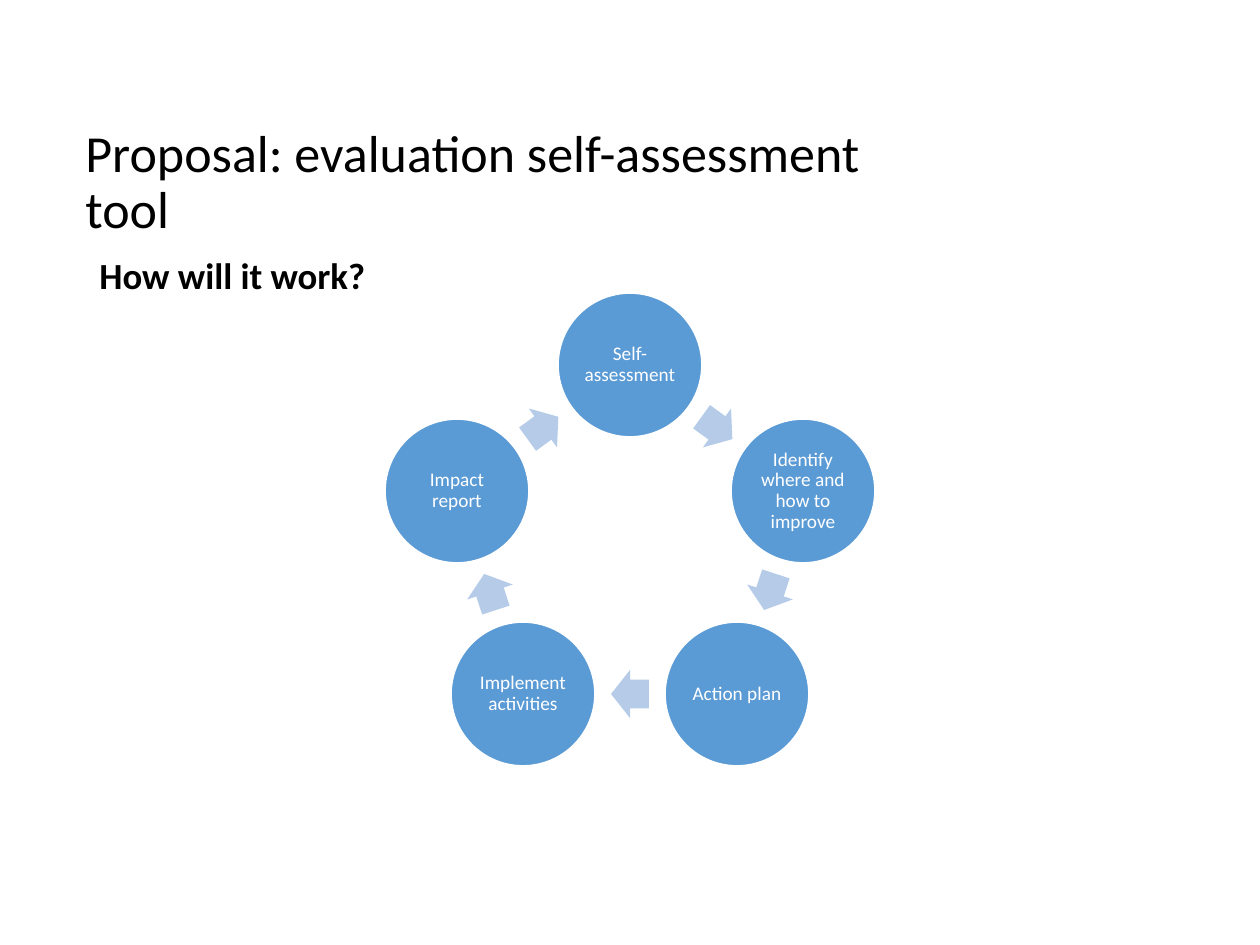
import math

import pptx
import pptx.util
from pptx.dml.color import RGBColor
from pptx.enum.shapes import MSO_SHAPE
from pptx.enum.text import MSO_ANCHOR, PP_ALIGN

PX = pptx.util.Inches(1) // 126
BLACK = RGBColor(0x00, 0x00, 0x00)
WHITE = RGBColor(0xFF, 0xFF, 0xFF)
BLUE = RGBColor(0x5B, 0x9B, 0xD5)
PALE_BLUE = RGBColor(0xB5, 0xCB, 0xE7)

CENTER_X, CENTER_Y, RADIUS = 630, 547, 182
CIRCLE = 144
ARROW_WIDTH, ARROW_HEIGHT = 38, 48
STEPS = [
    "Self-assessment",
    "Identify where and how to improve",
    "Action plan",
    "Implement activities",
    "Impact report",
]


def write(shape, text, size, color=BLACK, bold=False, align=PP_ALIGN.LEFT,
          anchor=MSO_ANCHOR.TOP, before=0, inset=None):
    frame = shape.text_frame
    frame.word_wrap = True
    frame.vertical_anchor = anchor
    if inset is not None:
        frame.margin_left = frame.margin_right = inset * PX
        frame.margin_top = frame.margin_bottom = inset * PX
    paragraph = frame.paragraphs[0]
    paragraph.alignment = align
    paragraph.line_spacing = 0.9
    paragraph.space_before = pptx.util.Pt(before)
    run = paragraph.add_run()
    run.text = text
    run.font.name = "Calibri"
    run.font.size = pptx.util.Pt(size)
    run.font.bold = bold
    run.font.color.rgb = color


def add_on_ring(preset, angle, radius, width, height, fill):
    """Center a filled shape on the ring, with the angle clockwise from the top."""
    x = CENTER_X + radius * math.sin(math.radians(angle))
    y = CENTER_Y - radius * math.cos(math.radians(angle))
    left, top = round(x - width / 2), round(y - height / 2)
    shape = slide.shapes.add_shape(preset, left * PX, top * PX, width * PX, height * PX)
    shape.shadow.inherit = False
    shape.fill.solid()
    shape.fill.fore_color.rgb = fill
    return shape


prs = pptx.Presentation()
prs.slide_width = 1260 * PX
prs.slide_height = 945 * PX
slide = prs.slides.add_slide(prs.slide_layouts[6])

title = slide.shapes.add_textbox(73 * PX, 115 * PX, 822 * PX, 137 * PX)
write(title, "Proposal: evaluation self-assessment tool", 29.7, anchor=MSO_ANCHOR.MIDDLE)

question = slide.shapes.add_textbox(87 * PX, 252 * PX, 1086 * PX, 600 * PX)
write(question, "How will it work?", 21, bold=True, before=7.5)

turn = 360 / len(STEPS)
arrow_radius = RADIUS * math.cos(math.radians(turn / 2))
for index, step in enumerate(STEPS):
    angle = index * turn
    circle = add_on_ring(MSO_SHAPE.OVAL, angle, RADIUS, CIRCLE, CIRCLE, BLUE)
    circle.line.color.rgb = WHITE
    circle.line.width = pptx.util.Pt(1)
    write(circle, step, 11, color=WHITE, align=PP_ALIGN.CENTER,
          anchor=MSO_ANCHOR.MIDDLE, inset=2)

    arrow_angle = angle + turn / 2
    arrow = add_on_ring(MSO_SHAPE.RIGHT_ARROW, arrow_angle, arrow_radius,
                        ARROW_WIDTH, ARROW_HEIGHT, PALE_BLUE)
    arrow.line.fill.background()
    arrow.rotation = arrow_angle
    arrow.adjustments[0] = 0.6
    arrow.adjustments[1] = 0.5

prs.save("out.pptx")
